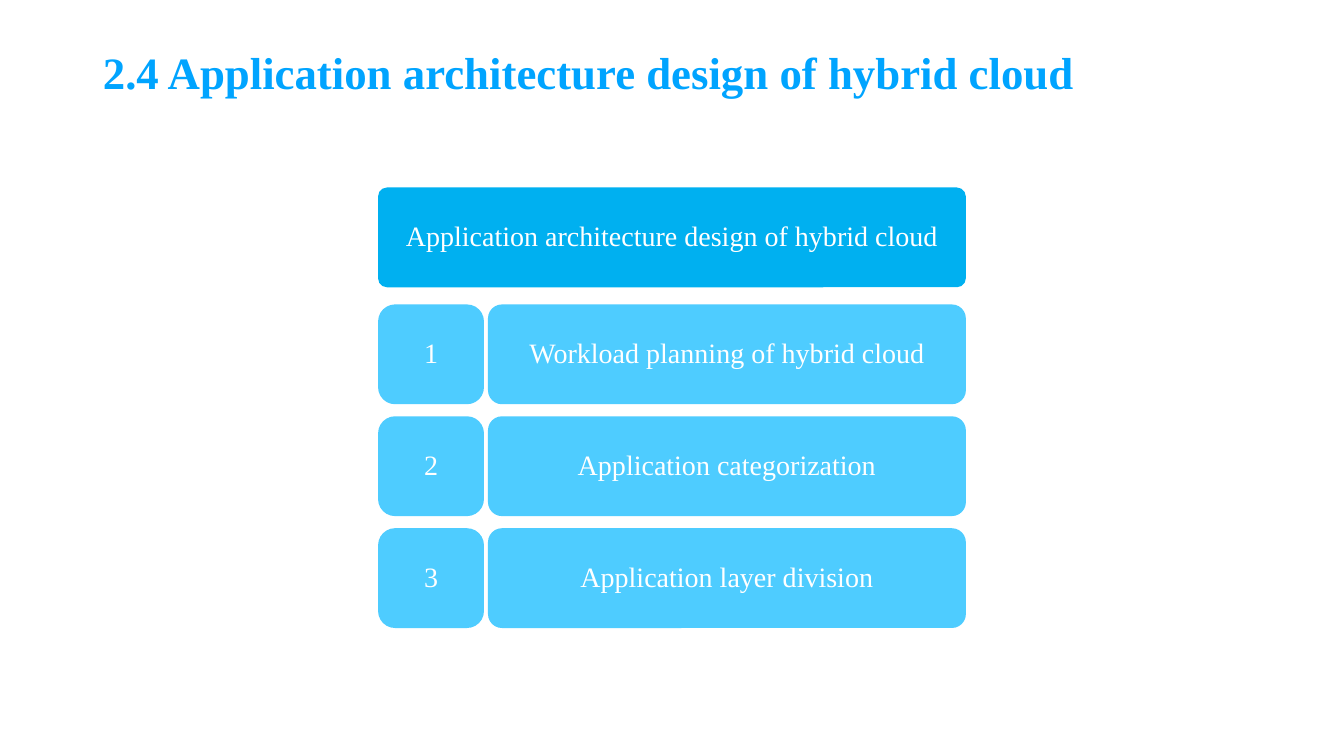
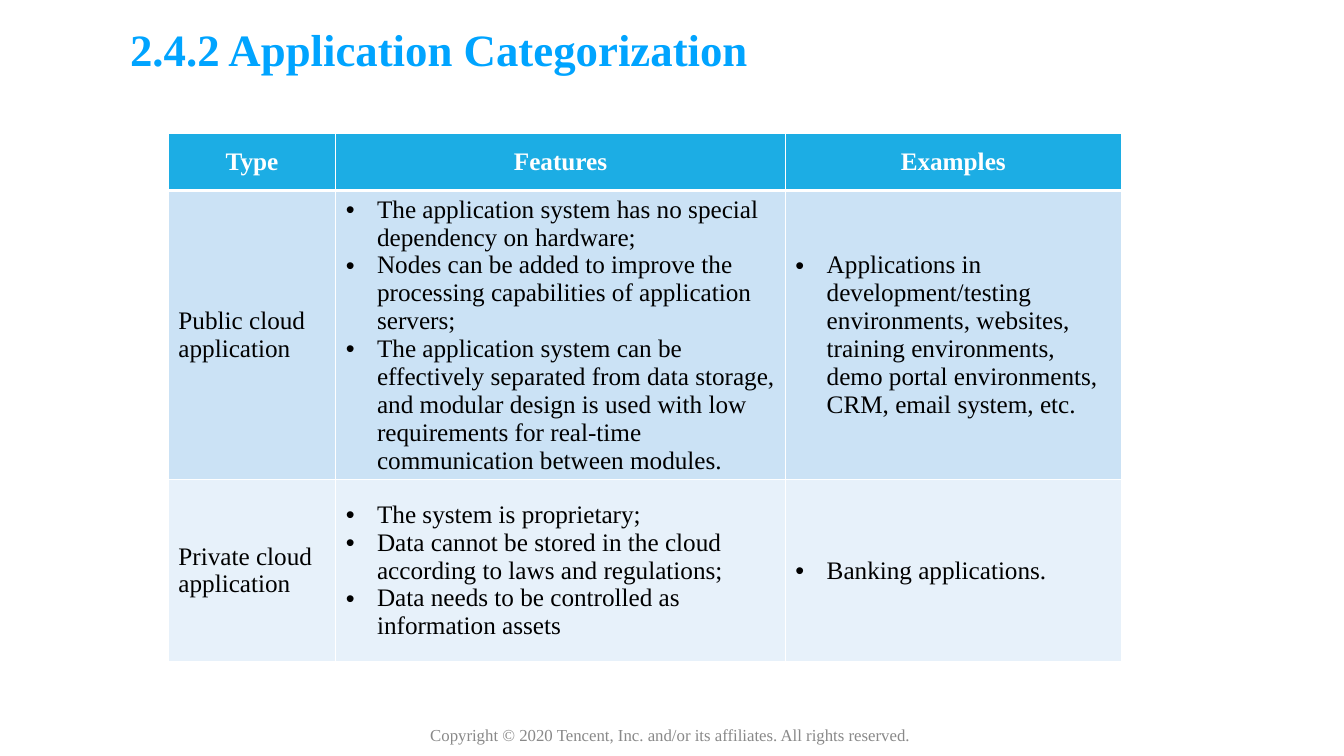
import dataclasses

import lxml.etree
import pptx
import pptx.dml.color
import pptx.enum.shapes
import pptx.enum.text
import pptx.oxml.ns
import pptx.util

ALIGN = pptx.enum.text.PP_ALIGN
MIDDLE = pptx.enum.text.MSO_ANCHOR.MIDDLE
PX = 9144  # 100 px to the inch


@dataclasses.dataclass(frozen=True)
class Theme:
    font: str = "Times New Roman"
    title: str = "00A4FF"
    banner: str = "00B0F0"
    tile: str = "4ECCFF"
    header: str = "1CADE4"
    bands: tuple = ("CBE2F5", "E7F1FA")
    light: str = "FFFFFF"
    dark: str = "000000"
    muted: str = "898989"
    title_size: int = 32
    tile_size: int = 20
    table_size: int = 18
    footer_size: int = 12


THEME = Theme()

AGENDA = [
    "Workload planning of hybrid cloud",
    "Application categorization",
    "Application layer division",
]

HEADINGS = ["Type", "Features", "Examples"]
CATEGORIES = [
    ("Public cloud application",
     ["The application system has no special dependency on hardware;",
      "Nodes can be added to improve the processing capabilities of "
      "application servers;",
      "The application system can be effectively separated from data storage, "
      "and modular design is used with low requirements for real-time "
      "communication between modules."],
     ["Applications in development/testing environments, websites, training "
      "environments, demo portal environments, CRM, email system, etc."]),
    ("Private cloud application",
     ["The system is proprietary;",
      "Data cannot be stored in the cloud according to laws and regulations;",
      "Data needs to be controlled as information assets"],
     ["Banking applications."]),
]


# Basics
def px(*lengths):
    return [pptx.util.Emu(length * PX) for length in lengths]


def rgb(color):
    return pptx.dml.color.RGBColor.from_string(color)


def add_xml(parent, tag, **attributes):
    return lxml.etree.SubElement(parent, pptx.oxml.ns.qn(tag), attributes)


def write(paragraph, text, size, color, bold=False, align=ALIGN.LEFT, spacing=None):
    paragraph.alignment = align
    if spacing:
        paragraph.line_spacing = spacing
    run = paragraph.add_run()
    run.text = text
    run.font.name = THEME.font
    run.font.size = pptx.util.Pt(size)
    run.font.bold = bold
    run.font.color.rgb = rgb(color)


def set_frame(frame, inset_x=10, inset_y=5):
    frame.word_wrap = True
    frame.auto_size = pptx.enum.text.MSO_AUTO_SIZE.NONE
    frame.vertical_anchor = MIDDLE
    frame.margin_left = frame.margin_right = px(inset_x)[0]
    frame.margin_top = frame.margin_bottom = px(inset_y)[0]


# Slide elements
def add_titled_slide(deck, text, left, top):
    slide = deck.slides.add_slide(deck.slide_layouts.get_by_name("Title Only"))
    title = slide.shapes.title
    title.left, title.top, title.width, title.height = px(left, top, 1074, 99)
    set_frame(title.text_frame)
    write(title.text_frame.paragraphs[0], text, THEME.title_size, THEME.title,
          bold=True, spacing=0.9)
    return slide


def add_tile(slide, text, box, color, rounding, insets):
    tile = slide.shapes.add_shape(
        pptx.enum.shapes.MSO_SHAPE.ROUNDED_RECTANGLE, *px(*box))
    tile.adjustments[0] = rounding
    tile.shadow.inherit = False
    tile.fill.solid()
    tile.fill.fore_color.rgb = rgb(color)
    tile.line.fill.background()
    set_frame(tile.text_frame, *insets)
    write(tile.text_frame.paragraphs[0], text, THEME.tile_size, THEME.light,
          align=ALIGN.CENTER, spacing=0.9)


def add_footer(slide, text):
    footer = slide.shapes.add_textbox(*px(407, 709, 520, 40))
    set_frame(footer.text_frame)
    write(footer.text_frame.paragraphs[0], text, THEME.footer_size, THEME.muted,
          align=ALIGN.CENTER)


# Table parts
def add_bullet(paragraph):
    properties = paragraph._p.get_or_add_pPr()
    indent = px(31)[0]
    properties.set("marL", str(indent))
    properties.set("indent", str(-indent))
    color = add_xml(properties, "a:buClr")
    add_xml(color, "a:srgbClr", val=THEME.dark)
    add_xml(properties, "a:buFont", typeface="Arial")
    add_xml(properties, "a:buChar", char="•")


def style_cell(cell, color, top=1, bottom=1):
    properties = cell._tc.get_or_add_tcPr()
    for side, points in (("L", 1), ("R", 1), ("T", top), ("B", bottom)):
        border = add_xml(properties, f"a:ln{side}", w=str(pptx.util.Pt(points)))
        fill = add_xml(border, "a:solidFill")
        add_xml(fill, "a:srgbClr", val=THEME.light)
    cell.fill.solid()
    cell.fill.fore_color.rgb = rgb(color)
    cell.vertical_anchor = MIDDLE


def write_bullets(cell, items):
    frame = cell.text_frame
    for index, item in enumerate(items):
        paragraph = frame.add_paragraph() if index else frame.paragraphs[0]
        add_bullet(paragraph)
        write(paragraph, item, THEME.table_size, THEME.dark)


def add_category_table(slide):
    widths, heights = px(166, 446, 333), px(57, 287, 180)
    table = slide.shapes.add_table(
        len(heights), len(widths), *px(167, 132), sum(widths), sum(heights)).table
    for column, width in zip(table.columns, widths):
        column.width = width
    for row, height in zip(table.rows, heights):
        row.height = height

    for cell, heading in zip(table.rows[0].cells, HEADINGS):
        style_cell(cell, THEME.header, bottom=3)
        write(cell.text_frame.paragraphs[0], heading, THEME.table_size,
              THEME.light, bold=True, align=ALIGN.CENTER)

    for index, (kind, features, examples) in enumerate(CATEGORIES):
        cells = list(table.rows[index + 1].cells)
        for cell in cells:
            style_cell(cell, THEME.bands[index], top=1 if index else 3)
        write(cells[0].text_frame.paragraphs[0], kind, THEME.table_size, THEME.dark)
        write_bullets(cells[1], features)
        write_bullets(cells[2], examples)


# Slides
def build_agenda(deck):
    heading = "Application architecture design of hybrid cloud"
    slide = add_titled_slide(deck, f"2.4 {heading}", 92, 25)
    add_tile(slide, heading, (375, 186, 583, 99), THEME.banner, 0.09, (8, 6))
    for index, topic in enumerate(AGENDA):
        top = 302 + 111 * index
        add_tile(slide, str(index + 1), (375, top, 105, 99), THEME.tile, 0.17, (19, 19))
        add_tile(slide, topic, (484, top, 474, 99), THEME.tile, 0.14, (19, 19))


def build_categorization(deck):
    slide = add_titled_slide(deck, "2.4.2 Application Categorization", 119, 2)
    add_category_table(slide)
    add_footer(slide, "Copyright © 2020 Tencent, Inc. and/or its affiliates. "
                      "All rights reserved. ")


def main():
    deck = pptx.Presentation()
    deck.slide_width, deck.slide_height = px(1333, 750)
    build_agenda(deck)
    build_categorization(deck)
    deck.save("out.pptx")


if __name__ == "__main__":
    main()
